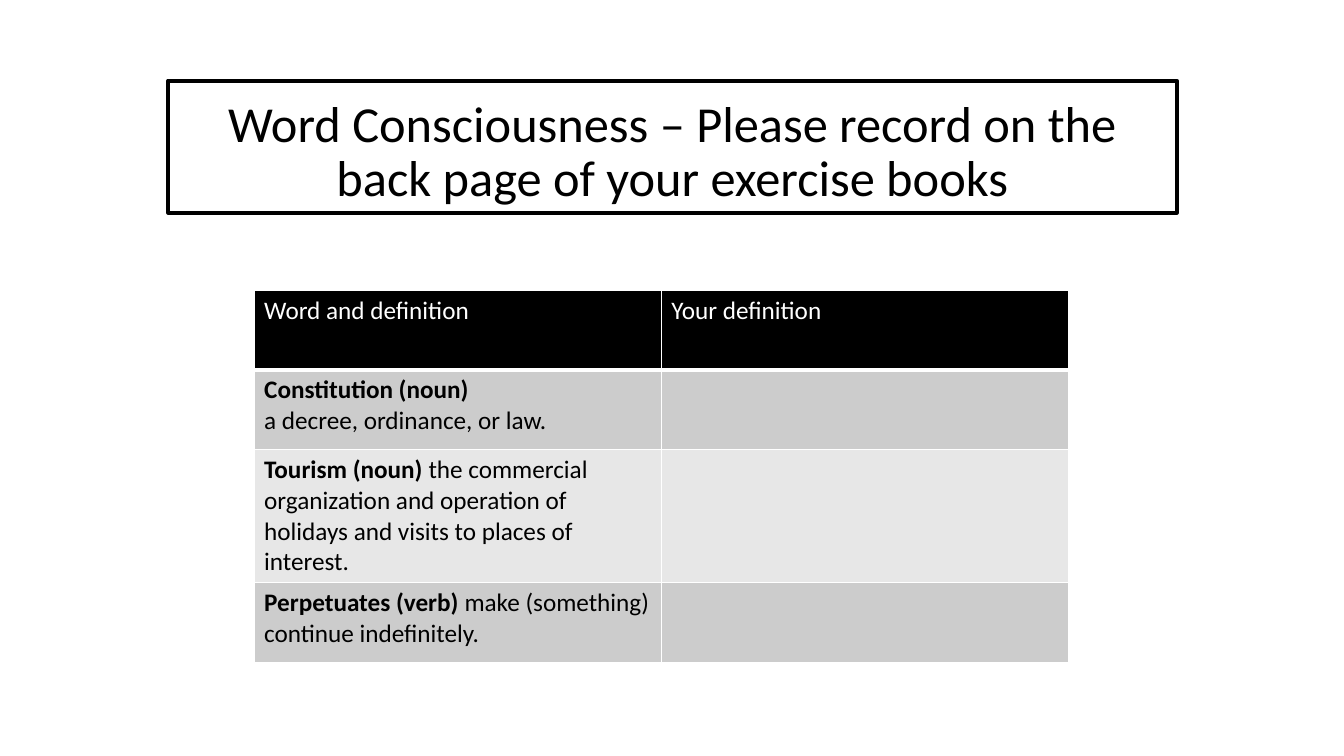
import pptx
import pptx.util
import pptx.dml.color
import pptx.enum.text
import pptx.oxml
import pptx.oxml.ns
from pptx.util import Inches, Pt

TITLE = "Word Consciousness – Please record on the back page of your exercise books"
HEADERS = ["Word and definition", "Your definition"]
# Word, whether the definition starts on a new line, definition
WORDS = [
    ("Constitution (noun) ", True, "a decree, ordinance, or law."),
    ("Tourism (noun) ", False,
     "the commercial organization and operation of holidays and visits to places of interest."),
    ("Perpetuates (verb) ", False, "make (something) continue indefinitely."),
]
COLORS = {"black": "000000", "white": "FFFFFF", "dark_band": "CCCCCC", "light_band": "E7E7E7"}
FONT = "Calibri"
COLUMN_WIDTH, ROW_HEIGHT = 4.04, 0.79


def color(name):
    return pptx.dml.color.RGBColor.from_string(COLORS[name])


def format_run(run, size, color_name, bold=False):
    run.font.name = FONT
    run.font.size = Pt(size)
    run.font.bold = bold
    run.font.color.rgb = color(color_name)


def style_cell(cell, fill_name, bottom_width=1):
    """Draw white borders and then the fill, in the order the schema asks for."""
    properties = cell._tc.get_or_add_tcPr()
    for side in ("L", "R", "T", "B"):
        width = Pt(bottom_width if side == "B" else 1)
        properties.append(pptx.oxml.parse_xml(
            f'<a:ln{side} {pptx.oxml.ns.nsdecls("a")} w="{width}"><a:solidFill>'
            f'<a:srgbClr val="{COLORS["white"]}"/></a:solidFill></a:ln{side}>'))
    cell.fill.solid()
    cell.fill.fore_color.rgb = color(fill_name)


def add_title(slide):
    title = slide.shapes.title
    title.left, title.top = Inches(1.67), Inches(0.8)
    title.width, title.height = Inches(10), Inches(1.31)
    title.fill.solid()
    title.fill.fore_color.rgb = color("white")
    title.line.color.rgb = color("black")
    title.line.width = Pt(3)
    text_frame = title.text_frame
    text_frame.text = TITLE
    text_frame.word_wrap = True
    text_frame.auto_size = pptx.enum.text.MSO_AUTO_SIZE.NONE
    text_frame.vertical_anchor = pptx.enum.text.MSO_ANCHOR.BOTTOM
    paragraph = text_frame.paragraphs[0]
    paragraph.alignment = pptx.enum.text.PP_ALIGN.CENTER
    paragraph.line_spacing = 0.9
    format_run(paragraph.runs[0], 36, "black")


def add_word_table(slide):
    row_count, column_count = len(WORDS) + 1, len(HEADERS)
    table = slide.shapes.add_table(
        row_count, column_count, Inches(2.52), Inches(2.88),
        Inches(COLUMN_WIDTH * column_count), Inches(ROW_HEIGHT * row_count)).table

    for column, header in enumerate(HEADERS):
        cell = table.cell(0, column)
        cell.text = header
        format_run(cell.text_frame.paragraphs[0].runs[0], 18, "white")
        style_cell(cell, "black", bottom_width=3)

    for row, (word, new_line, definition) in enumerate(WORDS, start=1):
        paragraph = table.cell(row, 0).text_frame.paragraphs[0]
        paragraph.text = word
        if new_line:
            paragraph.add_line_break()
        paragraph.add_run().text = definition
        for run, bold in zip(paragraph.runs, (True, False)):
            format_run(run, 18, "black", bold)
        for column in range(column_count):
            style_cell(table.cell(row, column), "dark_band" if row % 2 else "light_band")


def main():
    presentation = pptx.Presentation()
    presentation.slide_width, presentation.slide_height = Inches(13.33), Inches(7.5)
    slide = presentation.slides.add_slide(presentation.slide_layouts[5])
    add_title(slide)
    add_word_table(slide)
    presentation.save("out.pptx")


if __name__ == "__main__":
    main()
